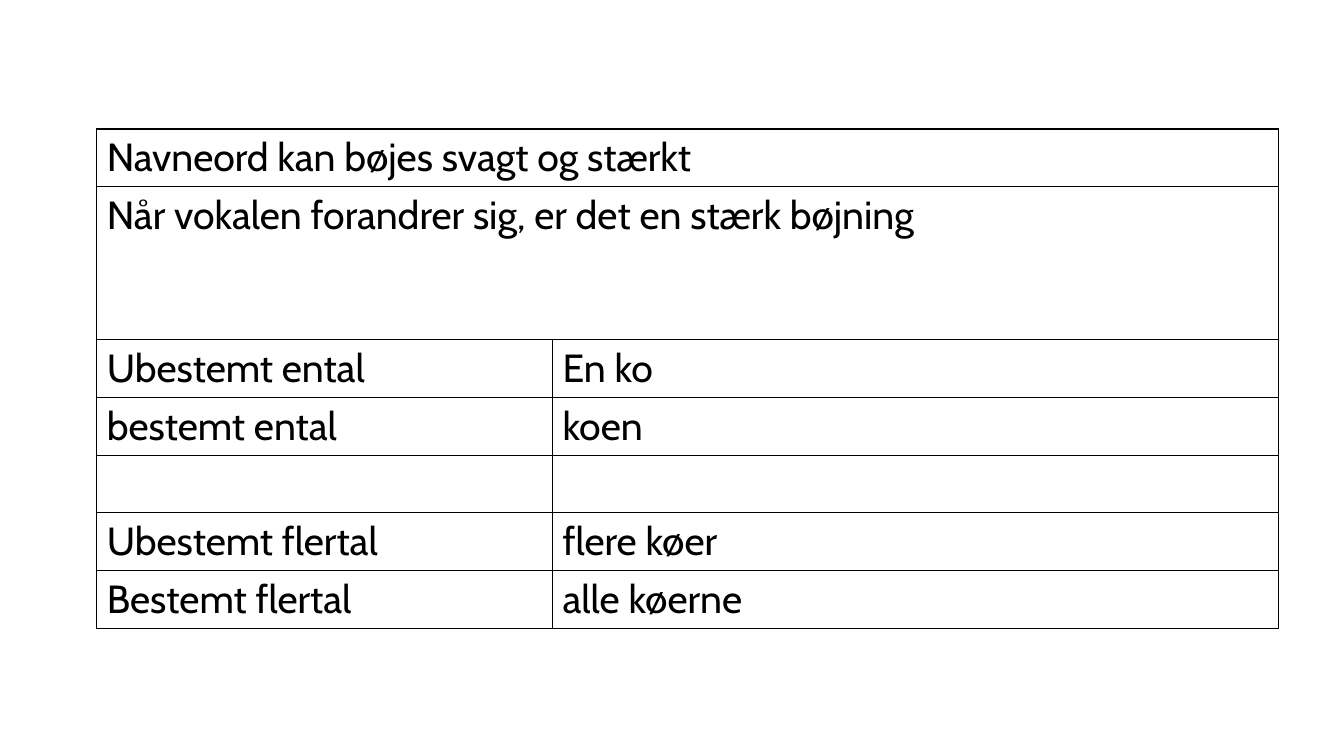
from lxml import etree
from pptx import Presentation
from pptx import util as u
from pptx.dml.color import RGBColor
from pptx.oxml import ns

ROWS = [
    ("Navneord kan bøjes svagt og stærkt",),
    ("Når vokalen forandrer sig, er det en stærk bøjning",),
    ("Ubestemt ental", "En ko"),
    ("bestemt ental", "koen"),
    ("", ""),
    ("Ubestemt flertal", "flere køer"),
    ("Bestemt flertal", "alle køerne"),
]
COLUMN_WIDTHS = [4.52, 7.2]
ROW_HEIGHTS = [0.57, 1.52] + [0.57] * 5


def colour(value):
    return RGBColor.from_string(value)


def write_text(frame, text, font="Cabin", size=28, ink="000000"):
    span = frame.paragraphs[0].add_run()
    span.text = text
    span.font.name = font
    span.font.size = u.Pt(size)
    span.font.color.rgb = colour(ink)


class GrammarSlide:
    font = "Cabin"
    size = 28
    ink = "000000"
    border_width = 1

    def __init__(self, deck):
        self.page = deck.slides.add_slide(deck.slide_layouts[6])

    def borders(self, cell):
        properties = cell._tc.get_or_add_tcPr()
        for side in ("a:lnL", "a:lnR", "a:lnT", "a:lnB"):
            line = etree.SubElement(properties, ns.qn(side), w=str(u.Pt(self.border_width)))
            fill = etree.SubElement(line, ns.qn("a:solidFill"))
            etree.SubElement(fill, ns.qn("a:srgbClr"), val=self.ink)

    def table(self, left, top, rows, widths, heights):
        frame = self.page.shapes.add_table(
            len(rows), len(widths), u.Inches(left), u.Inches(top),
            u.Inches(sum(widths)), u.Inches(sum(heights)))
        table = frame.table
        table.first_row = False
        table.horz_banding = False
        for column, width in zip(table.columns, widths):
            column.width = u.Inches(width)
        for row, height in zip(table.rows, heights):
            row.height = u.Inches(height)
        for cell in table.iter_cells():
            self.borders(cell)
            cell.fill.background()
        for index, texts in enumerate(rows):
            if len(texts) < len(widths):
                table.cell(index, 0).merge(table.cell(index, len(widths) - 1))
            for position, text in enumerate(texts):
                if text:
                    write_text(table.cell(index, position).text_frame, text,
                               font=self.font, size=self.size, ink=self.ink)


def main():
    deck = Presentation()
    deck.slide_width = u.Inches(13.33)
    deck.slide_height = u.Inches(7.5)
    slide = GrammarSlide(deck)
    slide.table(0.96, 1.28, ROWS, COLUMN_WIDTHS, ROW_HEIGHTS)
    deck.save("out.pptx")


if __name__ == "__main__":
    main()
